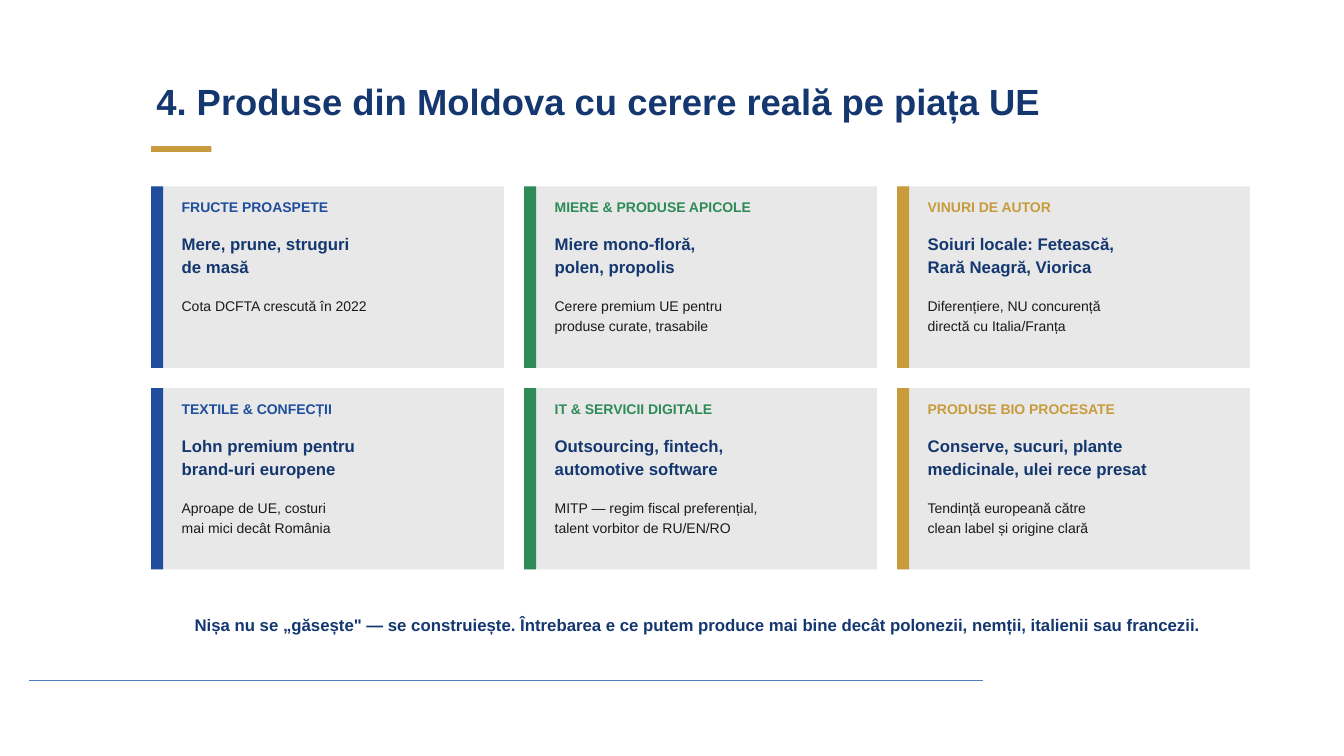
from dataclasses import dataclass

from lxml import etree
from pptx import Presentation
from pptx import util as u
from pptx.dml.color import RGBColor
from pptx.enum import shapes, text
from pptx.oxml import ns


@dataclass(frozen=True)
class Theme:
    font: str = "Arial"
    navy: str = "14376F"
    blue: str = "1F4E9D"
    green: str = "2E8B57"
    gold: str = "C89B3C"
    ink: str = "1A1A1A"
    card: str = "E8E8E8"
    rule: str = "4F81BD"
    title_size: int = 26
    lead_size: int = 12
    body_size: int = 10


THEME = Theme()
COLUMN_COLOURS = (THEME.blue, THEME.green, THEME.gold)
PRODUCTS = [
    ("FRUCTE PROASPETE", "Mere, prune, struguri\nde masă",
     "Cota DCFTA crescută în 2022"),
    ("MIERE & PRODUSE APICOLE", "Miere mono-floră,\npolen, propolis",
     "Cerere premium UE pentru\nproduse curate, trasabile"),
    ("VINURI DE AUTOR", "Soiuri locale: Fetească,\nRară Neagră, Viorica",
     "Diferențiere, NU concurență\ndirectă cu Italia/Franța"),
    ("TEXTILE & CONFECȚII", "Lohn premium pentru\nbrand-uri europene",
     "Aproape de UE, costuri\nmai mici decât România"),
    ("IT & SERVICII DIGITALE", "Outsourcing, fintech,\nautomotive software",
     "MITP — regim fiscal preferențial,\ntalent vorbitor de RU/EN/RO"),
    ("PRODUSE BIO PROCESATE", "Conserve, sucuri, plante\nmedicinale, ulei rece presat",
     "Tendință europeană către\nclean label și origine clară"),
]


def add_block(slide, left, top, width, height, colour):
    """Add a plain filled rectangle; lengths in centimetres."""
    block = slide.shapes.add_shape(
        shapes.MSO_SHAPE.RECTANGLE, u.Cm(left), u.Cm(top), u.Cm(width), u.Cm(height))
    block.shadow.inherit = False
    block.fill.solid()
    block.fill.fore_color.rgb = RGBColor.from_string(colour)
    block.line.fill.background()


def add_label(slide, left, top, width, height, wording, size, colour,
              bold=True, spacing=1.15, align=text.PP_ALIGN.LEFT):
    """Add a one-paragraph text box; a newline in the wording is a line break."""
    box = slide.shapes.add_textbox(u.Cm(left), u.Cm(top), u.Cm(width), u.Cm(height))
    frame = box.text_frame
    frame.word_wrap = True
    frame.auto_size = text.MSO_AUTO_SIZE.SHAPE_TO_FIT_TEXT
    frame.margin_left = frame.margin_right = u.Cm(0.13)
    frame.margin_top = frame.margin_bottom = u.Cm(0.05)
    paragraph = frame.paragraphs[0]
    paragraph.alignment = align
    paragraph.line_spacing = spacing
    for index, line in enumerate(wording.split("\n")):
        if index:
            paragraph.add_line_break()
        run = paragraph.add_run()
        run.text = line
        run.font.name = THEME.font
        run.font.size = u.Pt(size)
        run.font.bold = bold
        run.font.color.rgb = RGBColor.from_string(colour)


def add_heading(slide, left, top, width):
    add_label(slide, left, top, width, 1.78,
              "4. Produse din Moldova cu cerere reală pe piața UE",
              THEME.title_size, THEME.navy)
    add_block(slide, left, top + 1.9, 1.52, 0.15, THEME.gold)


def add_card(slide, left, top, width, height, product, accent):
    category, offer, reason = product
    add_block(slide, left, top, width, height, THEME.card)
    add_block(slide, left, top, 0.3, height, accent)
    text_left, text_width = left + 0.64, width - 0.76
    add_label(slide, text_left, top + 0.2, text_width, 0.76, category,
              THEME.body_size, accent)
    add_label(slide, text_left, top + 1.07, text_width, 1.4, offer,
              THEME.lead_size, THEME.navy)
    add_label(slide, text_left, top + 2.67, text_width, 1.78, reason,
              THEME.body_size, THEME.ink, bold=False, spacing=1.2)


def add_product_grid(slide, left, top, width, height, gap=0.51):
    columns = len(COLUMN_COLOURS)
    rows = len(PRODUCTS) // columns
    card_width = (width - gap * (columns - 1)) / columns
    card_height = (height - gap * (rows - 1)) / rows
    for index, product in enumerate(PRODUCTS):
        row, column = divmod(index, columns)
        add_card(slide, left + column * (card_width + gap),
                 top + row * (card_height + gap),
                 card_width, card_height, product, COLUMN_COLOURS[column])


def add_footer_rule(slide, left, top, width):
    rule = slide.shapes.add_connector(
        shapes.MSO_CONNECTOR.STRAIGHT,
        u.Cm(left), u.Cm(top), u.Cm(left + width), u.Cm(top))
    rule.line.color.rgb = RGBColor.from_string(THEME.rule)
    rule.line.width = u.Pt(0.75)
    etree.SubElement(rule.element.spPr, ns.qn("a:effectLst"))


def main():
    presentation = Presentation()
    presentation.slide_width = u.Cm(33.87)
    presentation.slide_height = u.Cm(19.05)
    slide = presentation.slides.add_slide(presentation.slide_layouts[6])
    add_footer_rule(slide, 0.74, 17.15, 24.03)
    add_heading(slide, 3.81, 1.78, 27.94)
    add_product_grid(slide, 3.81, 4.7, 27.69, 9.65)
    add_label(slide, 3.81, 15.37, 27.56, 0.64,
              "Nișa nu se „găsește\" — se construiește. Întrebarea e ce putem produce "
              "mai bine decât polonezii, nemții, italienii sau francezii.",
              THEME.lead_size, THEME.navy, align=text.PP_ALIGN.CENTER)
    presentation.save("out.pptx")


if __name__ == "__main__":
    main()
